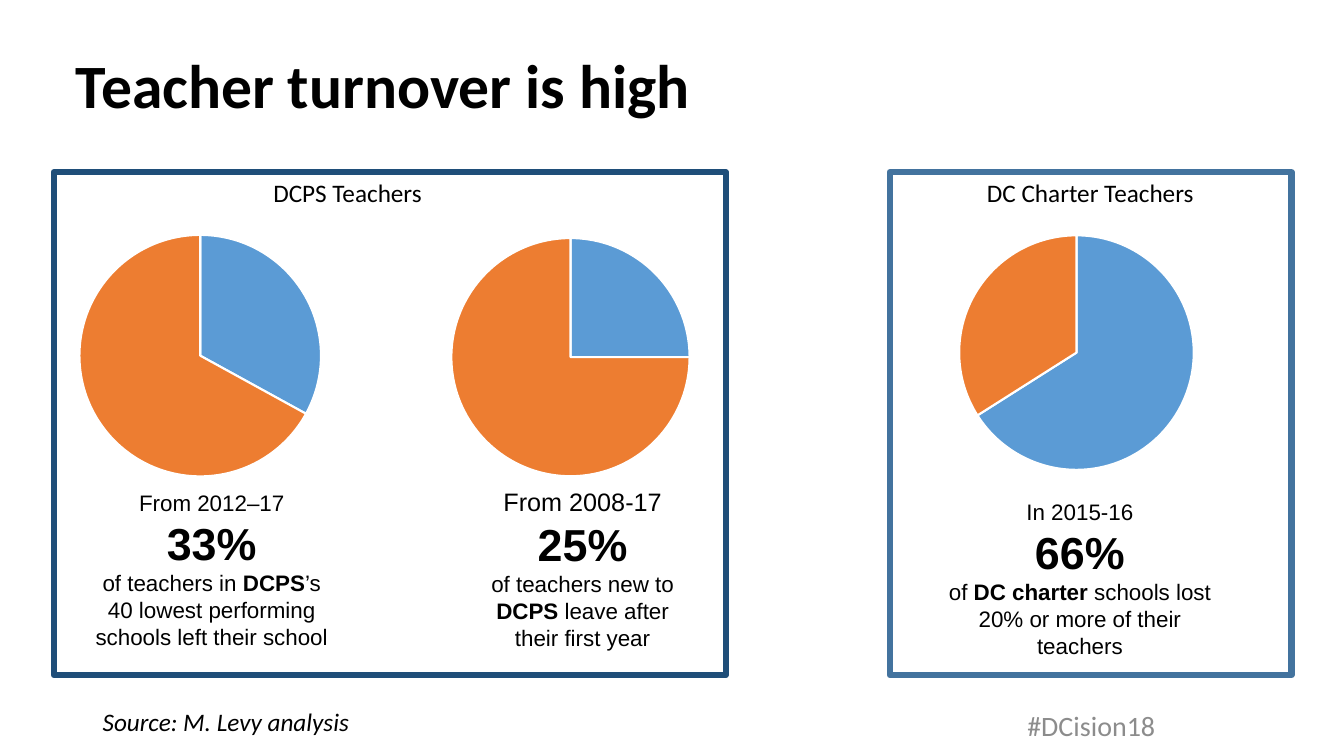
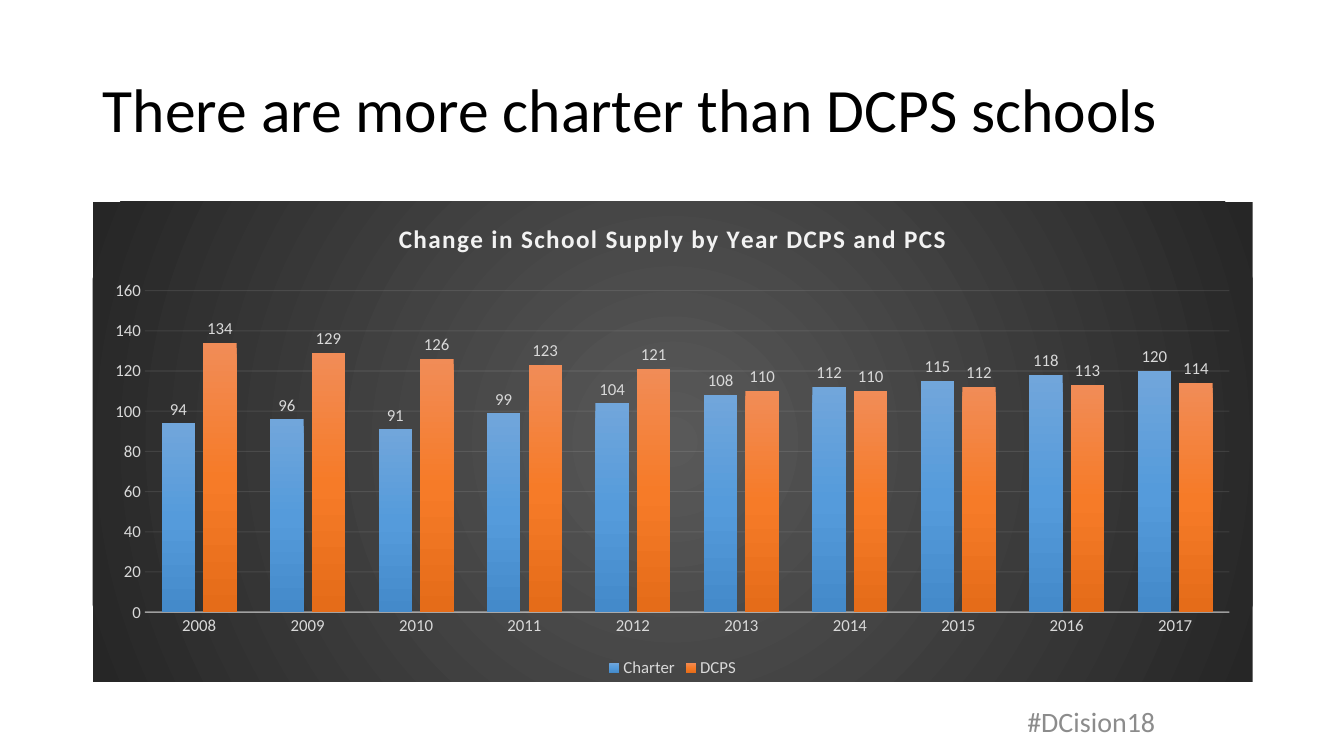
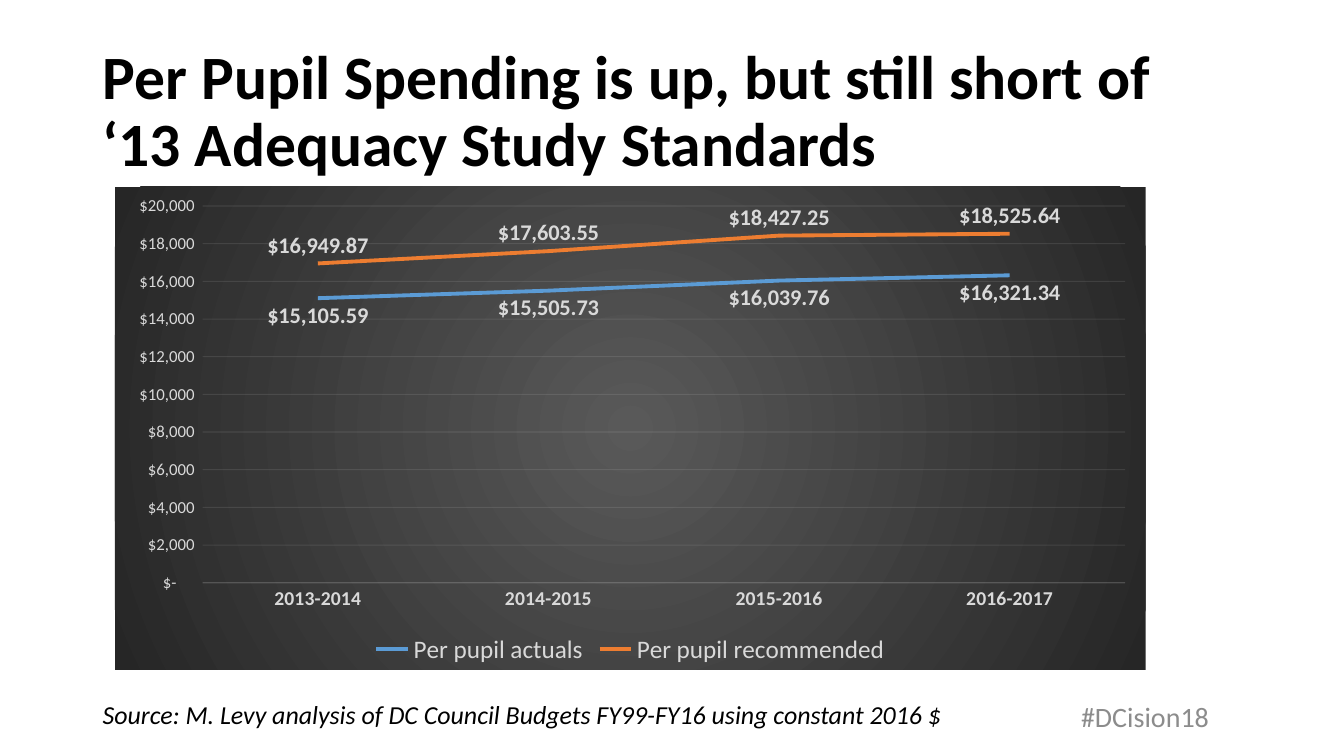
from lxml.etree import SubElement
from pptx import Presentation
from pptx.chart.data import CategoryChartData
from pptx.dml.color import RGBColor
from pptx.enum.chart import (XL_CHART_TYPE, XL_LABEL_POSITION,
                             XL_LEGEND_POSITION, XL_TICK_MARK)
from pptx.enum.shapes import MSO_SHAPE
from pptx.enum.text import MSO_ANCHOR, MSO_AUTO_SIZE, PP_ALIGN
from pptx.oxml import parse_xml
from pptx.oxml.ns import nsdecls, qn
from pptx.util import Inches, Pt

# Slide grid: one hundred columns by one hundred rows
SLIDE_WIDTH, SLIDE_HEIGHT = Inches(13.33), Inches(7.5)
COLUMN, ROW = SLIDE_WIDTH / 100, SLIDE_HEIGHT / 100
PANEL_TOP, PANEL_HEIGHT = 22.8, 66.5

# Shared look
HEADING_FONT, BODY_FONT = "Calibri", "Arial"
BLACK = RGBColor(0x00, 0x00, 0x00)
WHITE = RGBColor(0xFF, 0xFF, 0xFF)
TAG_GRAY = RGBColor(0x8C, 0x8C, 0x8C)
BLUE = RGBColor(0x5B, 0x9B, 0xD5)
ORANGE = RGBColor(0xED, 0x7D, 0x31)
NAVY = RGBColor(0x1F, 0x4E, 0x79)
STEEL = RGBColor(0x43, 0x73, 0x9E)
CHART_TEXT = RGBColor(0xD9, 0xD9, 0xD9)
PALE = RGBColor(0xF2, 0xF2, 0xF2)
BACKDROP = [(0, RGBColor(0x59, 0x59, 0x59)), (100, RGBColor(0x26, 0x26, 0x26))]
BLUE_SHADES = [(0, RGBColor(0x71, 0xA6, 0xDB)), (50, RGBColor(0x55, 0x9B, 0xDB)),
               (100, RGBColor(0x44, 0x8A, 0xCA))]
ORANGE_SHADES = [(0, RGBColor(0xF1, 0x8C, 0x57)), (50, RGBColor(0xF6, 0x7B, 0x28)),
                 (100, RGBColor(0xE5, 0x6C, 0x19))]
DOWNWARD = '<a:lin ang="5400000" scaled="0"/>'
FROM_CENTER = ('<a:path path="circle"><a:fillToRect l="50000" t="50000" '
               'r="50000" b="50000"/></a:path>')
DOLLARS = '_("$"* #,##0_);_("$"* \\(#,##0\\);_("$"* "-"??_);_(@_)'
DOLLARS_CENTS = '"$"#,##0.00'


def place(left, top, width, height):
    """Turn grid columns and rows into slide lengths."""
    return (int(left * COLUMN), int(top * ROW),
            int(width * COLUMN), int(height * ROW))


# Text
def set_font(font, size, color=BLACK, bold=False, italic=False, name=HEADING_FONT):
    font.name, font.size, font.bold, font.italic = name, Pt(size), bold, italic
    font.color.rgb = color


def add_run(paragraph, text, size, **style):
    run = paragraph.add_run()
    run.text = text
    set_font(run.font, size, **style)
    return run


def add_title(presentation, text, area, bold):
    """Add a title-only slide and set its title."""
    slide = presentation.slides.add_slide(presentation.slide_layouts[5])
    title = slide.shapes.title
    title.left, title.top, title.width, title.height = place(*area)
    frame = title.text_frame
    frame.auto_size = MSO_AUTO_SIZE.NONE
    frame.vertical_anchor = MSO_ANCHOR.MIDDLE
    paragraph = frame.paragraphs[0]
    paragraph.alignment, paragraph.line_spacing = PP_ALIGN.LEFT, 0.9
    add_run(paragraph, text, 44, bold=bold)
    return slide


def add_text_frame(slide, area):
    frame = slide.shapes.add_textbox(*place(*area)).text_frame
    frame.word_wrap = True
    return frame


def add_line_of_text(slide, text, area, size, alignment=PP_ALIGN.LEFT,
                     spacing=1.0, anchor=MSO_ANCHOR.TOP, **style):
    frame = add_text_frame(slide, area)
    frame.vertical_anchor = anchor
    paragraph = frame.paragraphs[0]
    paragraph.alignment, paragraph.line_spacing = alignment, spacing
    add_run(paragraph, text, size, **style)


def add_hashtag(slide, left, top):
    add_line_of_text(slide, "#DCision18", (left, top, 33.8, 5.3), 20,
                     PP_ALIGN.CENTER, anchor=MSO_ANCHOR.MIDDLE, color=TAG_GRAY)


def add_finding(slide, area, period, period_size, share, lines):
    """Period, large share, then lines made of (text, bold) runs."""
    frame = add_text_frame(slide, area)
    rows = [[(period, period_size, False)], [(share, 32, True)]]
    rows += [[(text, 16, bold) for text, bold in line] for line in lines]
    for index, row in enumerate(rows):
        paragraph = frame.add_paragraph() if index else frame.paragraphs[0]
        paragraph.alignment = PP_ALIGN.CENTER
        for text, size, bold in row:
            add_run(paragraph, text, size, bold=bold, name=BODY_FONT)


def add_panel(slide, left, width, color, heading, heading_left, heading_width):
    """Outlined panel with its heading."""
    panel = slide.shapes.add_shape(
        MSO_SHAPE.RECTANGLE, *place(left, PANEL_TOP, width, PANEL_HEIGHT))
    panel.shadow.inherit = False
    panel.fill.background()
    panel.line.color.rgb, panel.line.width = color, Pt(4.5)
    add_line_of_text(slide, heading, (heading_left, PANEL_TOP, heading_width, 5.3), 18)


# Charts
def gradient_properties(stops, direction):
    marks = "".join(f'<a:gs pos="{position * 1000}"><a:srgbClr val="{color}"/></a:gs>'
                    for position, color in stops)
    return parse_xml(f'<c:spPr {nsdecls("c", "a")}><a:gradFill><a:gsLst>{marks}'
                     f'</a:gsLst>{direction}</a:gradFill></c:spPr>')


def set_faint_line(line, width, opacity):
    line.color.rgb, line.width = PALE, Pt(width)
    color = line._get_or_add_ln().find(".//" + qn("a:srgbClr"))
    SubElement(color, qn("a:alpha")).set("val", str(opacity * 1000))


def set_plot_layout(chart, left, top, width, height):
    """Place the inner plot area by shares of the chart."""
    plot_area = chart._chartSpace.find(".//" + qn("c:plotArea"))
    for layout in plot_area.findall(qn("c:layout")):
        plot_area.remove(layout)
    shares = "".join(f'<c:{key} val="{value}"/>' for key, value in
                     zip("xywh", (left, top, width, height)))
    plot_area.insert(0, parse_xml(
        f'<c:layout {nsdecls("c")}><c:manualLayout><c:layoutTarget val="inner"/>'
        f'<c:xMode val="edge"/><c:yMode val="edge"/>{shares}'
        f'</c:manualLayout></c:layout>'))


def add_chart(slide, kind, area, categories, series, layout):
    data = CategoryChartData()
    data.categories = categories
    for name, values in series:
        data.add_series(name, values)
    chart = slide.shapes.add_chart(kind, *place(*area), data).chart
    chart.has_title = chart.has_legend = False
    set_font(chart.font, 10)
    set_plot_layout(chart, *layout)
    return chart


def add_pie(slide, area, share):
    chart = add_chart(slide, XL_CHART_TYPE.PIE, area, ["1", "2"],
                      [("Series 1", (share, 100 - share))], (0.05, 0.05, 0.9, 0.9))
    for index, color in enumerate((BLUE, ORANGE)):
        point = chart.plots[0].series[0].points[index]
        point.format.fill.solid()
        point.format.fill.fore_color.rgb = color
        point.format.line.color.rgb, point.format.line.width = WHITE, Pt(1.5)


def add_dark_chart(slide, kind, area, categories, series, layout, maximum, step,
                   axis_line, category_size, category_bold, legend_size):
    """Chart on a dark backdrop with faint gridlines and a legend below."""
    chart = add_chart(slide, kind, area, categories, series, layout)
    chart._chartSpace.find(qn("c:chart")).addnext(
        gradient_properties(BACKDROP, FROM_CENTER))
    chart.plots[0].vary_by_categories = False
    chart.has_legend = True
    chart.legend.position = XL_LEGEND_POSITION.BOTTOM
    chart.legend.include_in_layout = False
    set_font(chart.legend.font, legend_size, CHART_TEXT)
    category_axis, value_axis = chart.category_axis, chart.value_axis
    for axis in (category_axis, value_axis):
        axis.major_tick_mark = axis.minor_tick_mark = XL_TICK_MARK.NONE
    set_font(category_axis.tick_labels.font, category_size, CHART_TEXT, category_bold)
    set_faint_line(category_axis.format.line, *axis_line)
    set_font(value_axis.tick_labels.font, 12, CHART_TEXT)
    value_axis.minimum_scale, value_axis.maximum_scale = 0, maximum
    value_axis.major_unit = step
    value_axis.format.line.fill.background()
    set_faint_line(value_axis.major_gridlines.format.line, 0.75, 10)
    return chart


def label_values(series, position, size, bold=False):
    labels = series.data_labels
    labels.show_value, labels.position = True, position
    set_font(labels.font, size, CHART_TEXT, bold)
    return labels


# Slides
def build_turnover(presentation):
    slide = add_title(presentation, "Teacher turnover is high",
                      (4.9, 2.1, 86.3, 19.3), True)
    add_panel(slide, 4, 50, NAVY, "DCPS Teachers", 19.6, 14)
    add_panel(slide, 66.2, 29.9, STEEL, "DC Charter Teachers", 72.7, 19.7)
    add_pie(slide, (4, 29.3, 21.8, 35.5), 33)
    add_pie(slide, (32.6, 28.1, 19.7, 38.3), 25)
    add_pie(slide, (70.4, 29.3, 19.4, 34.7), 66)
    add_finding(slide, (4.9, 64, 21.7, 22.9), "From 2012–17", 16, "33%", [
        [("of teachers in ", False), ("DCPS", True), ("’s", False)],
        [("40 lowest performing", False)],
        [("schools left their school", False)]])
    add_finding(slide, (31.9, 63.7, 22.9, 23.3), "From 2008-17", 18, "25%", [
        [("of teachers new to", False)],
        [("DCPS", True), (" leave after", False)],
        [("their first year", False)]])
    add_finding(slide, (69.7, 65.2, 21.3, 22.9), "In 2015-16", 16, "66%", [
        [("of ", False), ("DC charter ", True),
         ("schools lost 20% or more of their teachers", False)]])
    add_line_of_text(slide, "Source: M. Levy analysis", (6.9, 93.2, 86.3, 5.6), 18,
                     spacing=0.9, italic=True)
    add_hashtag(slide, 64.3, 93.3)


def build_school_supply(presentation):
    slide = add_title(presentation, "There are more charter than DCPS schools",
                      (6.9, 5.3, 89.3, 19.3), False)
    chart = add_dark_chart(
        slide, XL_CHART_TYPE.COLUMN_CLUSTERED, (6.9, 26.7, 86.3, 63.5),
        [str(year) for year in range(2008, 2018)],
        [("Charter", (94, 96, 91, 99, 104, 108, 112, 115, 118, 120)),
         ("DCPS", (134, 129, 126, 123, 121, 110, 110, 112, 113, 114))],
        (0.045, 0.185, 0.935, 0.67), maximum=160, step=20, axis_line=(1, 54),
        category_size=12, category_bold=False, legend_size=12)
    chart.has_title = True
    heading = add_run(chart.chart_title.text_frame.paragraphs[0],
                      "Change in School Supply by Year DCPS and PCS", 18,
                      color=PALE, bold=True)
    heading._r.get_or_add_rPr().set("spc", "100")
    plot = chart.plots[0]
    plot.gap_width, plot.overlap = 100, -24
    for series, shades in zip(plot.series, (BLUE_SHADES, ORANGE_SHADES)):
        properties = series._element.get_or_add_spPr()
        properties.getparent().replace(properties, gradient_properties(shades, DOWNWARD))
        label_values(series, XL_LABEL_POSITION.OUTSIDE_END, 12)
    add_hashtag(slide, 64.3, 92.7)


def build_spending(presentation):
    slide = add_title(
        presentation,
        "Per Pupil Spending is up, but still short of ‘13 Adequacy Study Standards",
        (6.9, 5.3, 86.3, 19.3), True)
    add_line_of_text(
        slide,
        "Source: M. Levy analysis of DC Council Budgets FY99-FY16 using constant 2016 $",
        (6.9, 92.5, 89.3, 4.8), 18.5, spacing=0.8, italic=True)
    chart = add_dark_chart(
        slide, XL_CHART_TYPE.LINE, (8.55, 24.7, 76.7, 63.9),
        [f"{year}-{year + 1}" for year in range(2013, 2017)],
        [("Per pupil actuals", (15105.59, 15505.73, 16039.76, 16321.34)),
         ("Per pupil recommended", (16949.87, 17603.55, 18427.25, 18525.64))],
        (0.085, 0.04, 0.895, 0.78), maximum=20000, step=2000, axis_line=(0.75, 10),
        category_size=14, category_bold=True, legend_size=18)
    tick_labels = chart.value_axis.tick_labels
    tick_labels.number_format, tick_labels.number_format_is_linked = DOLLARS, False
    styles = ((BLUE, XL_LABEL_POSITION.BELOW), (ORANGE, XL_LABEL_POSITION.ABOVE))
    for series, (color, position) in zip(chart.plots[0].series, styles):
        series.smooth = False
        series.format.line.color.rgb, series.format.line.width = color, Pt(2.75)
        labels = label_values(series, position, 16, bold=True)
        labels.number_format, labels.number_format_is_linked = DOLLARS_CENTS, False
    add_hashtag(slide, 68.3, 92.1)


def main():
    presentation = Presentation()
    presentation.slide_width, presentation.slide_height = SLIDE_WIDTH, SLIDE_HEIGHT
    build_turnover(presentation)
    build_school_supply(presentation)
    build_spending(presentation)
    presentation.save("out.pptx")


if __name__ == "__main__":
    main()
